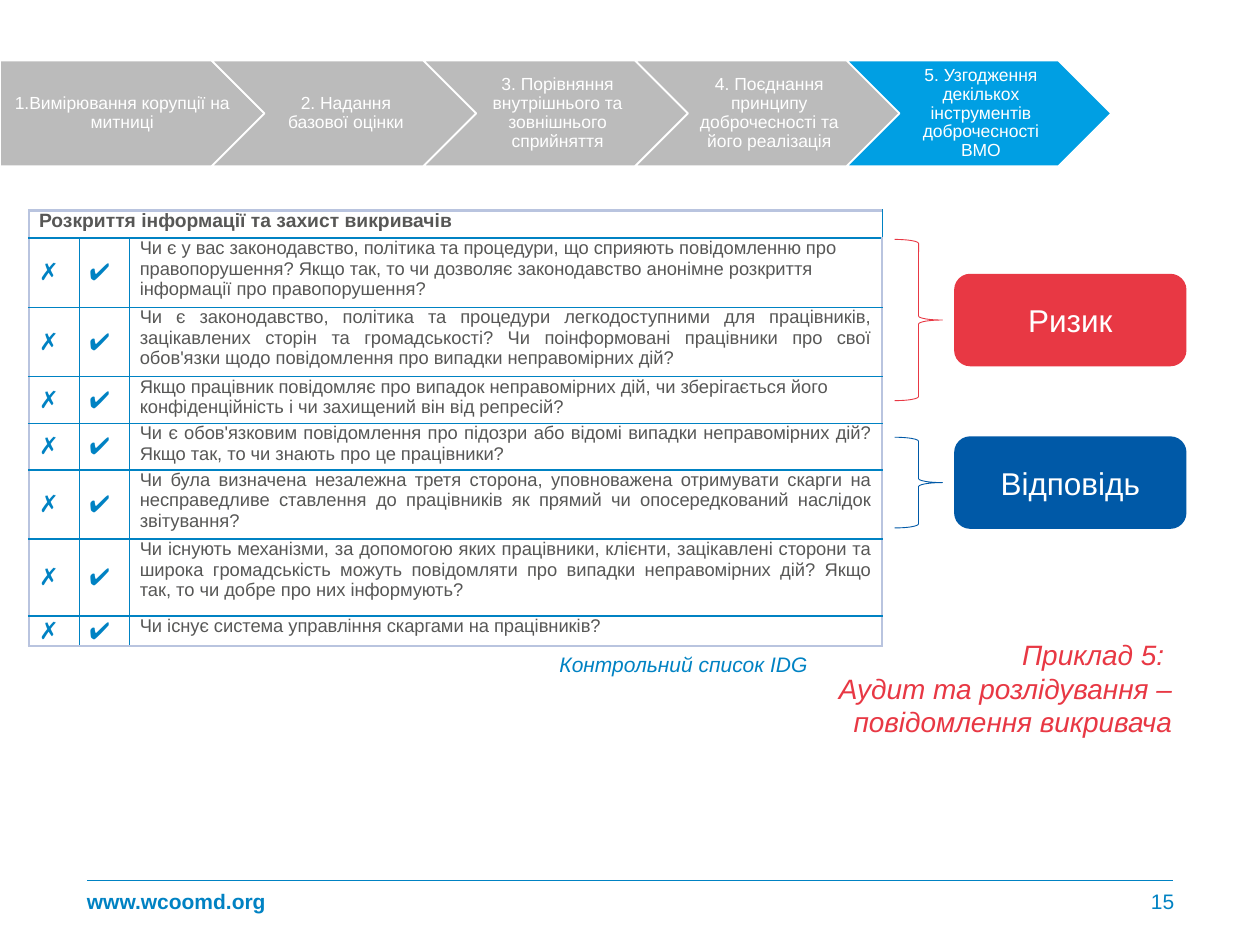
from dataclasses import dataclass

from lxml.etree import SubElement
from pptx import Presentation
from pptx.dml.color import RGBColor
from pptx.enum.shapes import MSO_CONNECTOR, MSO_SHAPE
from pptx.enum.text import MSO_ANCHOR, PP_ALIGN
from pptx.oxml.ns import qn
from pptx.util import Inches, Pt

FONT = "Arial"
BLUE = RGBColor(0x00, 0x82, 0xC3)
SKY = RGBColor(0x00, 0x9F, 0xE3)
NAVY = RGBColor(0x00, 0x59, 0xA7)
RED = RGBColor(0xE8, 0x38, 0x44)
GRAY = RGBColor(0xBB, 0xBB, 0xBB)
DARK = RGBColor(0x57, 0x57, 0x56)
FRAME = RGBColor(0xB9, 0xC4, 0xDF)
WHITE = RGBColor(0xFF, 0xFF, 0xFF)


@dataclass
class Question:
    text: str
    height: float
    align: PP_ALIGN = PP_ALIGN.JUSTIFY


@dataclass
class Category:
    label: str
    color: RGBColor
    top: float
    brace_top: float
    brace_height: float


STEPS = [
    "1.Вимірювання корупції на митниці",
    "2. Надання базової оцінки",
    "3. Порівняння внутрішнього та зовнішнього сприйняття",
    "4. Поєднання принципу доброчесності та його реалізація",
    "5. Узгодження декількох інструментів доброчесності ВМО",
]
QUESTIONS = [
    Question("Чи є у вас законодавство, політика та процедури, що сприяють повідомленню про "
             "правопорушення? Якщо так, то чи дозволяє законодавство анонімне розкриття "
             "інформації про правопорушення?", 0.55, PP_ALIGN.LEFT),
    Question("Чи є законодавство, політика та процедури легкодоступними для працівників, "
             "зацікавлених сторін та громадськості? Чи поінформовані працівники про свої "
             "обов'язки щодо повідомлення про випадки неправомірних дій?", 0.55),
    Question("Якщо працівник повідомляє про випадок неправомірних дій, чи зберігається його "
             "конфіденційність і чи захищений він від репресій?", 0.37, PP_ALIGN.LEFT),
    Question("Чи є обов'язковим повідомлення про підозри або відомі випадки неправомірних дій? "
             "Якщо так, то чи знають про це працівники?", 0.37),
    Question("Чи була визначена незалежна третя сторона, уповноважена отримувати скарги на "
             "несправедливе ставлення до працівників як прямий чи опосередкований наслідок "
             "звітування?", 0.55),
    Question("Чи існують механізми, за допомогою яких працівники, клієнти, зацікавлені сторони та "
             "широка громадськість можуть повідомляти про випадки неправомірних дій? Якщо так, "
             "то чи добре про них інформують?", 0.61),
    Question("Чи існує система управління скаргами на працівників?", 0.24),
]
CATEGORIES = [
    Category("Ризик", RED, 2.18, 1.9, 1.28),
    Category("Відповідь", NAVY, 3.47, 3.47, 0.72),
]


def set_font(p, size: float, color: RGBColor, bold=False, italic=False) -> None:
    font = p.font
    font.name, font.size, font.bold, font.italic = FONT, Pt(size), bold, italic
    font.color.rgb = color


def set_margins(box, left: float, top: float, right: float, bottom: float) -> None:
    box.margin_left, box.margin_top = Inches(left), Inches(top)
    box.margin_right, box.margin_bottom = Inches(right), Inches(bottom)


def add_shape(slide, kind, left, top, width, height, line, line_width, fill=None):
    sp = slide.shapes.add_shape(kind, Inches(left), Inches(top), Inches(width), Inches(height))
    sp.shadow.inherit = False
    if fill is None:
        sp.fill.background()
    else:
        sp.fill.solid()
        sp.fill.fore_color.rgb = fill
    sp.line.color.rgb = line
    sp.line.width = Pt(line_width)
    return sp


def add_text(slide, left, top, width, height, lines: list[str], size, color,
             align=PP_ALIGN.RIGHT, bold=False, italic=False):
    sp = slide.shapes.add_textbox(Inches(left), Inches(top), Inches(width), Inches(height))
    tf = sp.text_frame
    tf.word_wrap = True
    tf.text = "\n".join(lines)
    for p in tf.paragraphs:
        p.alignment = align
        set_font(p, size, color, bold, italic)
    return tf


def add_steps(slide) -> None:
    for i, label in enumerate(STEPS):
        kind = MSO_SHAPE.CHEVRON if i else MSO_SHAPE.PENTAGON
        fill = SKY if i == len(STEPS) - 1 else GRAY
        sp = add_shape(slide, kind, 1.68 * i, 0.48, 2.1, 0.84, WHITE, 1, fill)
        tf = sp.text_frame
        tf.word_wrap = True
        tf.vertical_anchor = MSO_ANCHOR.MIDDLE
        set_margins(tf, 0.04 if i else 0.06, 0.03, 0.01, 0.03)
        tf.text = label
        p = tf.paragraphs[0]
        p.alignment = PP_ALIGN.CENTER
        p.line_spacing = 0.9
        set_font(p, 10, WHITE)


def set_borders(cell, left, right, top, bottom) -> None:
    """Give each side a (colour, width in points) pair."""
    tc_pr = cell._tc.get_or_add_tcPr()
    for tag, (color, width) in zip(("lnL", "lnR", "lnT", "lnB"), (left, right, top, bottom)):
        ln = SubElement(tc_pr, qn(f"a:{tag}"), w=str(Pt(width)))
        fill = SubElement(ln, qn("a:solidFill"))
        SubElement(fill, qn("a:srgbClr"), val=str(color))


def fill_cell(cell, text, size, color, align=PP_ALIGN.LEFT, anchor=MSO_ANCHOR.TOP, bold=False):
    set_margins(cell, 0.08, 0, 0.08 if align == PP_ALIGN.JUSTIFY else 0, 0)
    cell.vertical_anchor = anchor
    cell.text = text
    p = cell.text_frame.paragraphs[0]
    p.alignment = align
    set_font(p, size, color, bold)


def add_checklist(slide) -> None:
    widths = [0.4, 0.4, 5.97]
    heights = [0.22] + [q.height for q in QUESTIONS]
    table = slide.shapes.add_table(len(heights), len(widths), Inches(0.23), Inches(1.67),
                                   Inches(sum(widths)), Inches(sum(heights))).table
    table.first_row = table.horz_banding = False
    for column, width in zip(table.columns, widths):
        column.width = Inches(width)
    for row, height in zip(table.rows, heights):
        row.height = Inches(height)

    frame, inner, divider = (FRAME, 1.5), (BLUE, 1), (BLUE, 0.5)
    last_row, last_col = len(heights) - 1, len(widths) - 1
    for r in range(len(heights)):
        for c in range(len(widths)):
            cell = table.cell(r, c)
            set_borders(cell, divider if c else frame, frame if c == last_col else divider,
                        inner if r else frame, frame if r == last_row else inner)
            cell.fill.background()

    table.cell(0, 0).merge(table.cell(0, last_col))
    fill_cell(table.cell(0, 0), "Розкриття інформації та захист викривачів", 11, DARK, bold=True)
    for r, question in enumerate(QUESTIONS, 1):
        for c, mark in enumerate("✗✔"):
            fill_cell(table.cell(r, c), mark, 13.5, BLUE, anchor=MSO_ANCHOR.MIDDLE)
        fill_cell(table.cell(r, last_col), question.text, 10.5, DARK, question.align)


def add_category(slide, category: Category) -> None:
    sp = add_shape(slide, MSO_SHAPE.ROUNDED_RECTANGLE, 7.58, category.top, 1.83, 0.72,
                   category.color, 1, category.color)
    tf = sp.text_frame
    tf.vertical_anchor = MSO_ANCHOR.MIDDLE
    tf.text = category.label
    p = tf.paragraphs[0]
    p.alignment = PP_ALIGN.CENTER
    set_font(p, 18, WHITE)
    add_shape(slide, MSO_SHAPE.RIGHT_BRACE, 7.1, category.brace_top, 0.38,
              category.brace_height, category.color, 0.5)


def add_footer(slide) -> None:
    rule = slide.shapes.add_connector(MSO_CONNECTOR.STRAIGHT, Inches(0.69), Inches(6.99),
                                      Inches(9.31), Inches(6.99))
    rule.line.color.rgb = BLUE
    rule.line.width = Pt(0.5)
    SubElement(rule._element.spPr, qn("a:effectLst"))
    site = add_text(slide, 0.69, 6.95, 1.46, 0.4, ["www.wcoomd.org"], 12, BLUE,
                    PP_ALIGN.LEFT, bold=True)
    number = add_text(slide, 8.68, 6.95, 0.64, 0.4, ["15"], 12, BLUE)
    for tf in (site, number):
        set_margins(tf, 0, 0.05, 0, 0.05)
        tf.vertical_anchor = MSO_ANCHOR.MIDDLE


def main() -> None:
    prs = Presentation()
    prs.slide_width, prs.slide_height = Inches(10), Inches(7.5)
    slide = prs.slides.add_slide(prs.slide_layouts[6])
    add_footer(slide)
    add_steps(slide)
    add_checklist(slide)
    for category in CATEGORIES:
        add_category(slide, category)
    add_text(slide, 6.51, 5.01, 2.89, 0.91,
             ["Приклад 5: ", "Аудит та розлідування – повідомлення викривача"],
             16, RED, italic=True)
    add_text(slide, 3.35, 5.12, 3.16, 0.3, ["Контрольний список IDG"], 12, BLUE, italic=True)
    prs.save("out.pptx")


if __name__ == "__main__":
    main()
